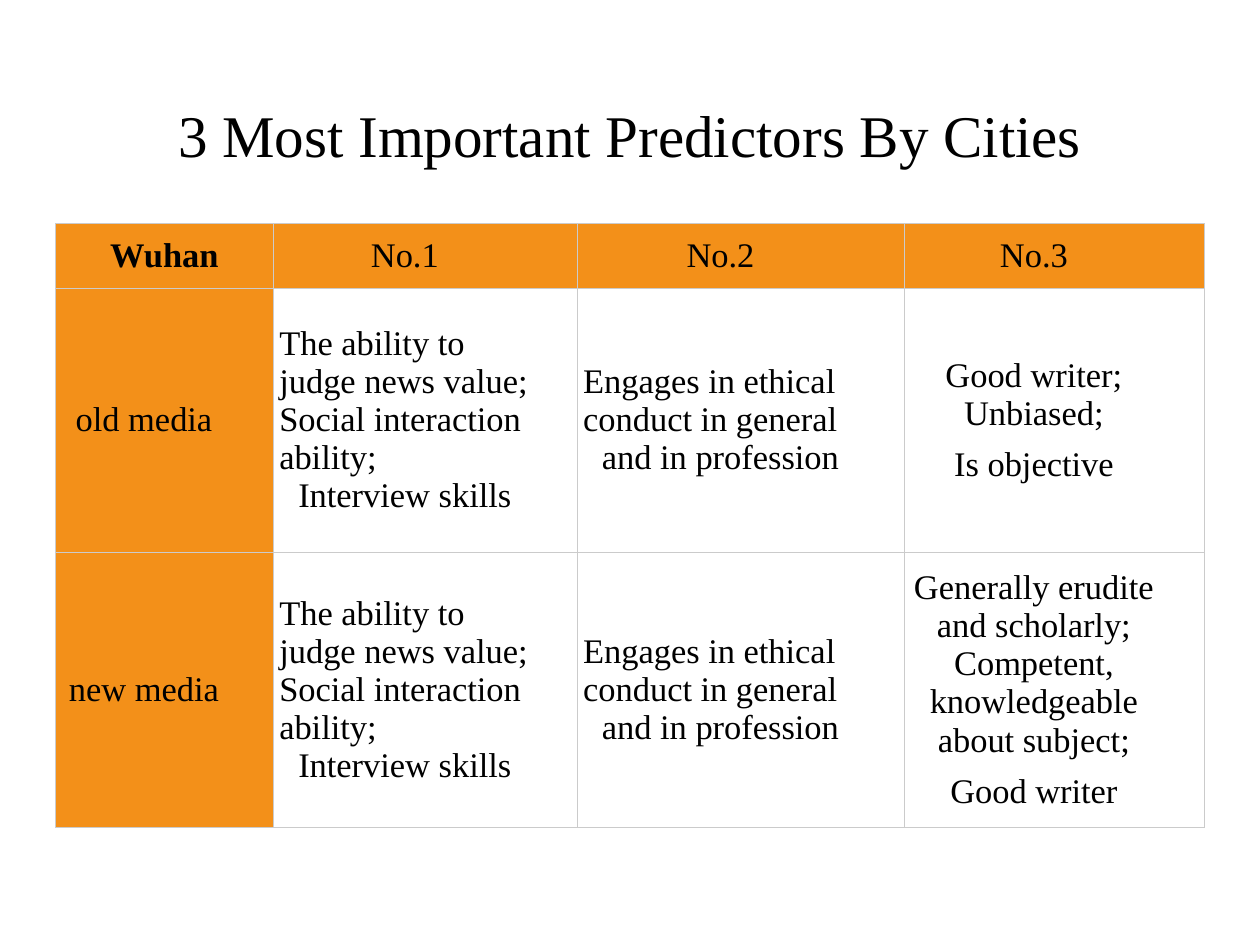
from pptx import Presentation
from pptx.dml.color import RGBColor
from pptx.enum import text as t
from pptx.oxml import parse_xml
from pptx.oxml.ns import nsdecls
from pptx.util import Pt

FONT = "Times New Roman"
BLACK = RGBColor(0x00, 0x00, 0x00)
WHITE = RGBColor(0xFF, 0xFF, 0xFF)
ORANGE = RGBColor(0xF3, 0x90, 0x19)
GREY = RGBColor(0xCB, 0xCB, 0xCB)

LEFT, CENTER = t.PP_ALIGN.LEFT, t.PP_ALIGN.CENTER
COLUMNS = [177, 247, 266, 243.5]
ROWS = [52.5, 214.5, 224]

SKILLS = ["The ability to", "judge news value;", "Social interaction",
          "ability;", "Interview skills"]
ETHICS = ["Engages in ethical", "conduct in general", "and in profession"]
CELLS = [
    [["Wuhan"], ["No.1"], ["No.2"], ["No.3"]],
    [["old media"], SKILLS, ETHICS,
     ["Good writer;", "Unbiased;", "Is objective"]],
    [["new media"], SKILLS, ETHICS,
     ["Generally erudite", "and scholarly;", "Competent,", "knowledgeable",
      "about subject;", "Good writer"]],
]


def style(p, size, bold=False):
    f = p.font
    f.name, f.size, f.bold = FONT, Pt(size), bold
    f.color.rgb = BLACK


def add_title(s, x, y, w, h):
    sp = s.shapes.title
    sp.left, sp.top, sp.width, sp.height = Pt(x), Pt(y), Pt(w), Pt(h)
    tf = sp.text_frame
    tf.text = "3 Most Important Predictors By Cities"
    tf.word_wrap, tf.auto_size = True, t.MSO_AUTO_SIZE.NONE
    tf.vertical_anchor = t.MSO_ANCHOR.MIDDLE
    tf.margin_left = tf.margin_right = tf.margin_top = tf.margin_bottom = 0
    p = tf.paragraphs[0]
    p.alignment, p.line_spacing = CENTER, 1.2
    style(p, 48)


def set_borders(cell):
    tcPr = cell._tc.get_or_add_tcPr()
    for i, side in enumerate("LRTB"):
        tcPr.insert(i, parse_xml(
            f'<a:ln{side} {nsdecls("a")} w="{Pt(0.5)}"><a:solidFill>'
            f'<a:srgbClr val="{GREY}"/></a:solidFill></a:ln{side}>'))


def fill_cell(cell, lines, row, col):
    """Centre the lines; columns 1 and 2 keep all but the last line at left."""
    corner = row == col == 0
    cell.fill.solid()
    cell.fill.fore_color.rgb = ORANGE if row == 0 or col == 0 else WHITE
    set_borders(cell)
    cell.vertical_anchor = t.MSO_ANCHOR.MIDDLE
    cell.margin_left = Pt(5)
    cell.margin_right = Pt(5 if corner else 38)
    cell.margin_top = cell.margin_bottom = Pt(4.5 if corner else 0)
    tf = cell.text_frame
    tf.text = "\n".join(lines)
    last = len(lines) - 1
    for i, p in enumerate(tf.paragraphs):
        p.alignment = LEFT if col in (1, 2) and i < last else CENTER
        style(p, 28, corner)
    if row and col == 3:
        p.line_spacing, p.space_before = 1.08, Pt(8)


def add_predictors(s, x, y):
    table = s.shapes.add_table(len(ROWS), len(COLUMNS), Pt(x), Pt(y),
                               Pt(sum(COLUMNS)), Pt(sum(ROWS))).table
    table.first_row = table.horz_banding = False
    for column, width in zip(table.columns, COLUMNS):
        column.width = Pt(width)
    for r, height in enumerate(ROWS):
        table.rows[r].height = Pt(height)
        for c, lines in enumerate(CELLS[r]):
            fill_cell(table.cell(r, c), lines, r, c)


def main():
    prs = Presentation()
    prs.slide_width, prs.slide_height = Pt(1024), Pt(768)
    s = prs.slides.add_slide(prs.slide_layouts[5])
    add_title(s, 75, 18, 874, 170)
    add_predictors(s, 45, 181.5)
    prs.save("out.pptx")


if __name__ == "__main__":
    main()
